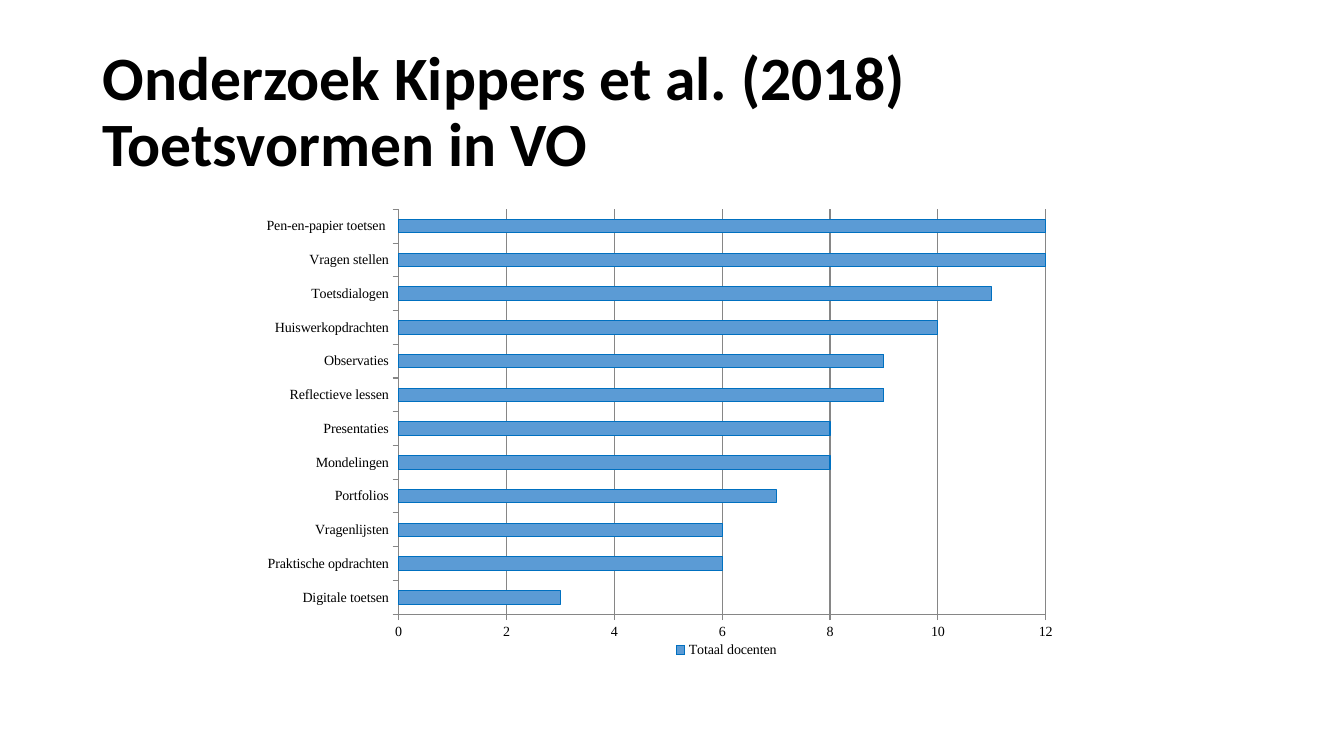
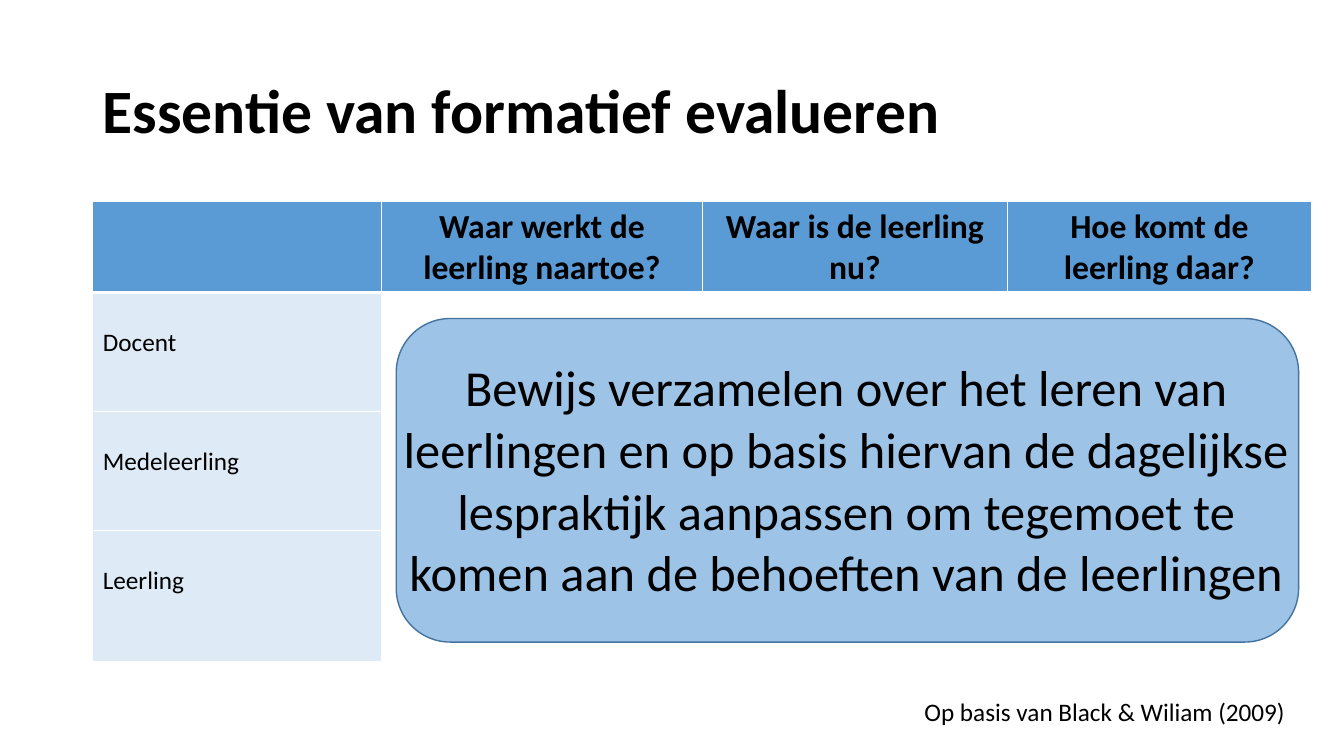
from typing import NamedTuple

from lxml import etree
from pptx import Presentation
from pptx.chart.data import CategoryChartData
from pptx.dml.color import RGBColor
from pptx.enum.chart import XL_CHART_TYPE, XL_LEGEND_POSITION, XL_TICK_MARK
from pptx.enum.shapes import MSO_SHAPE
from pptx.enum.text import MSO_ANCHOR, PP_ALIGN
from pptx.oxml import parse_xml
from pptx.oxml.ns import nsdecls, qn
from pptx.util import Inches, Pt

BAR_CLUSTERED = XL_CHART_TYPE.BAR_CLUSTERED
LEGEND_RIGHT = XL_LEGEND_POSITION.RIGHT
TICK_OUTSIDE = XL_TICK_MARK.OUTSIDE
ROUNDED = MSO_SHAPE.ROUNDED_RECTANGLE
TOP, MIDDLE = MSO_ANCHOR.TOP, MSO_ANCHOR.MIDDLE
LEFT, CENTER = PP_ALIGN.LEFT, PP_ALIGN.CENTER

BLACK = RGBColor(0x00, 0x00, 0x00)
WHITE = RGBColor(0xFF, 0xFF, 0xFF)
BLUE = RGBColor(0x5B, 0x9B, 0xD5)
BAR_EDGE = RGBColor(0x00, 0x70, 0xC0)
PALE_BLUE = RGBColor(0xDE, 0xEB, 0xF7)
PANEL_BLUE = RGBColor(0x9D, 0xC3, 0xE6)
PANEL_EDGE = RGBColor(0x43, 0x73, 0x9E)
GRID_GRAY = RGBColor(0x86, 0x86, 0x86)
BODY_FONT = "Calibri"
CHART_FONT = "Times New Roman"


class Area(NamedTuple):
    left: float
    top: float
    width: float
    height: float

    def lengths(self):
        return [Inches(value) for value in self]


class TestForm(NamedTuple):
    name: str
    teachers: int


TITLE_AREA = Area(0.92, 0.4, 11.5, 1.45)
CHART_AREA = Area(0.36, 1.85, 12.61, 5.4)
PANEL_AREA = Area(3.93, 3.16, 8.95, 3.21)
TABLE_AREA = Area(0.92, 2, 12.09, 4.49)
SOURCE_AREA = Area(9.07, 6.86, 3.82, 0.4)

TEST_FORMS = [
    TestForm("Digitale toetsen", 3),
    TestForm("Praktische opdrachten", 6),
    TestForm("Vragenlijsten", 6),
    TestForm("Portfolios", 7),
    TestForm("Mondelingen", 8),
    TestForm("Presentaties", 8),
    TestForm("Reflectieve lessen", 9),
    TestForm("Observaties", 9),
    TestForm("Huiswerkopdrachten", 10),
    TestForm("Toetsdialogen", 11),
    TestForm("Vragen stellen", 12),
    TestForm("Pen-en-papier toetsen ", 12),
]
COLUMN_WIDTHS = [2.86, 3.19, 3.02, 3.02]
ROW_HEIGHTS = [0.83, 1.18, 1.18, 1.3]
QUESTIONS = [
    "",
    "Waar werkt de leerling naartoe?",
    "Waar is de leerling nu?",
    "Hoe komt de leerling daar?",
]
ROLES = ["Docent", "Medeleerling", "Leerling"]
ESSENCE = (
    "Bewijs verzamelen over het leren van leerlingen en op basis hiervan "
    "de dagelijkse lespraktijk aanpassen om tegemoet te komen aan de "
    "behoeften van de leerlingen"
)


def write_text(frame, text: str, *, size: float, bold: bool = False,
               align=LEFT, anchor=TOP, spacing: float = 1.0,
               wrap: bool = True) -> None:
    frame.word_wrap = wrap
    frame.vertical_anchor = anchor
    para = frame.paragraphs[0]
    para.text = text
    para.alignment = align
    para.line_spacing = spacing
    for span in para.runs:
        span.font.name = BODY_FONT
        span.font.size = Pt(size)
        span.font.bold = bold
        span.font.color.rgb = BLACK


def add_page(deck, title: str):
    page = deck.slides.add_slide(deck.slide_layouts[6])
    box = page.shapes.add_textbox(*TITLE_AREA.lengths())
    write_text(box.text_frame, title, size=44, bold=True, anchor=MIDDLE,
               spacing=0.9)
    return page


def manual_layout(**values):
    """Return a chart layout element with the given settings, in order."""
    layout = parse_xml(f"<c:layout {nsdecls('c')}><c:manualLayout/></c:layout>")
    for name, value in values.items():
        etree.SubElement(layout[0], qn(f"c:{name}")).set("val", str(value))
    return layout


def place_plot(chart) -> None:
    plot_area = chart._chartSpace.xpath("c:chart/c:plotArea")[0]
    for old in plot_area.findall(qn("c:layout")):
        plot_area.remove(old)
    plot_area.insert(0, manual_layout(
        layoutTarget="inner", xMode="edge", yMode="edge",
        x=0.285, y=0.042, w=0.509, h=0.744))


def place_legend(chart) -> None:
    chart.has_legend = True
    legend = chart.legend
    legend.position = LEGEND_RIGHT
    legend.include_in_layout = False
    legend.font.name = CHART_FONT
    legend.font.size = Pt(10)
    overlay = chart._chartSpace.xpath("c:chart/c:legend/c:overlay")[0]
    overlay.addprevious(manual_layout(xMode="edge", yMode="edge",
                                      x=0.5, y=0.83))


def style_line(line, color: RGBColor, width: float) -> None:
    line.color.rgb = color
    line.width = Pt(width)


def add_test_chart(page) -> None:
    data = CategoryChartData()
    data.categories = [form.name for form in TEST_FORMS]
    data.add_series("Totaal docenten", [form.teachers for form in TEST_FORMS])
    chart = page.shapes.add_chart(BAR_CLUSTERED, *CHART_AREA.lengths(),
                                  data).chart
    chart.has_title = False
    chart.font.name = CHART_FONT
    chart.font.size = Pt(10)
    chart.font.color.rgb = BLACK

    plot = chart.plots[0]
    plot.gap_width = 150
    plot.vary_by_categories = False
    bars = plot.series[0].format
    bars.fill.solid()
    bars.fill.fore_color.rgb = BLUE
    style_line(bars.line, BAR_EDGE, 0.75)

    for axis in (chart.category_axis, chart.value_axis):
        axis.major_tick_mark = TICK_OUTSIDE
        axis.tick_labels.font.name = CHART_FONT
        axis.tick_labels.font.size = Pt(10)
        style_line(axis.format.line, GRID_GRAY, 0.75)
    scale = chart.value_axis
    scale.minimum_scale, scale.maximum_scale, scale.major_unit = 0, 12, 2
    scale.has_major_gridlines = True
    style_line(scale.major_gridlines.format.line, GRID_GRAY, 0.75)

    place_plot(chart)
    place_legend(chart)


def add_panel(page) -> None:
    panel = page.shapes.add_shape(ROUNDED, *PANEL_AREA.lengths())
    panel.shadow.inherit = False
    panel.fill.solid()
    panel.fill.fore_color.rgb = PANEL_BLUE
    style_line(panel.line, PANEL_EDGE, 1)


def set_borders(cell, *, top: float = 1, bottom: float = 1) -> None:
    widths = {"L": 1, "R": 1, "T": top, "B": bottom}
    properties = cell._tc.get_or_add_tcPr()
    for index, (side, width) in enumerate(widths.items()):
        properties.insert(index, parse_xml(
            f'<a:ln{side} {nsdecls("a")} w="{Pt(width)}"><a:solidFill>'
            f'<a:srgbClr val="{WHITE}"/></a:solidFill></a:ln{side}>'))


def fill_cell(cell, color: RGBColor) -> None:
    cell.fill.solid()
    cell.fill.fore_color.rgb = color


def add_essence_table(page) -> None:
    table = page.shapes.add_table(len(ROW_HEIGHTS), len(COLUMN_WIDTHS),
                                  *TABLE_AREA.lengths()).table
    for column, width in zip(table.columns, COLUMN_WIDTHS):
        column.width = Inches(width)
    for row_index, height in enumerate(ROW_HEIGHTS):
        table.rows[row_index].height = Inches(height)
        for cell in table.rows[row_index].cells:
            cell.fill.background()
            set_borders(cell, top=3 if row_index == 1 else 1,
                        bottom=3 if row_index == 0 else 1)

    for index, question in enumerate(QUESTIONS):
        cell = table.cell(0, index)
        fill_cell(cell, BLUE)
        write_text(cell.text_frame, question, size=24, bold=True, align=CENTER)
    for index, role in enumerate(ROLES, start=1):
        cell = table.cell(index, 0)
        fill_cell(cell, PALE_BLUE)
        cell.margin_top = Inches(0.35)
        write_text(cell.text_frame, role, size=18)

    essence = table.cell(1, 1)
    essence.merge(table.cell(3, 3))
    essence.margin_top = Inches(0.66)
    write_text(essence.text_frame, ESSENCE, size=36, align=CENTER)


def add_source(page) -> None:
    box = page.shapes.add_textbox(*SOURCE_AREA.lengths())
    write_text(box.text_frame, "Op basis van Black & Wiliam (2009)", size=18,
               wrap=False)


def main() -> None:
    deck = Presentation()
    deck.slide_width = Inches(13.33)
    deck.slide_height = Inches(7.5)

    add_test_chart(add_page(
        deck, "Onderzoek Kippers et al. (2018)\nToetsvormen in VO"))

    page = add_page(deck, "Essentie van formatief evalueren")
    add_panel(page)
    add_essence_table(page)
    add_source(page)

    deck.save("out.pptx")


if __name__ == "__main__":
    main()
